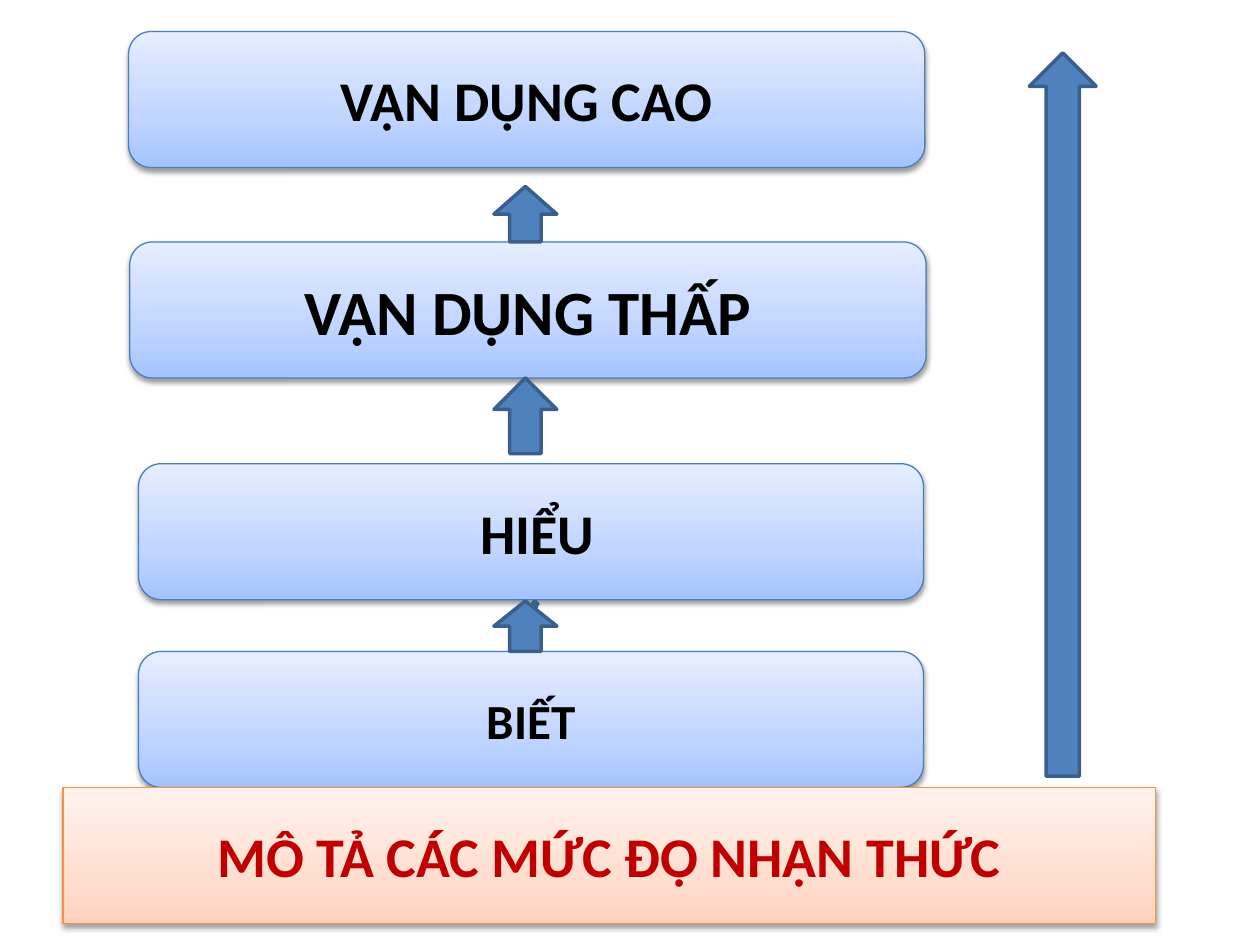
from lxml.etree import SubElement
from pptx import Presentation
from pptx.dml.color import RGBColor
from pptx.enum.shapes import MSO_SHAPE
from pptx.enum.text import MSO_ANCHOR, PP_ALIGN
from pptx.oxml import parse_xml
from pptx.oxml.ns import nsdecls, qn
from pptx.util import Inches, Pt

prs = Presentation()
prs.slide_width, prs.slide_height = Inches(10), Inches(7.5)
slide = prs.slides.add_slide(prs.slide_layouts[6])

# Grid of 100 columns by 75 rows
COL, ROW = prs.slide_width / 100, prs.slide_height / 75
BOX_H = 10.8
BLUE = ["A4C4FF", "BFD4FF", "E6EEFF"]
ORANGE = ["FFD2BD", "FFDED0", "FFF2ED"]
SHADOW = (
    f'<a:outerShdw {nsdecls("a")} blurRad="{Pt(3.1)}" dist="{Pt(1.6)}" dir="5400000" rotWithShape="0">'
    '<a:srgbClr val="000000"><a:alpha val="38000"/></a:srgbClr></a:outerShdw>'
)


def rgb(value):
    return RGBColor.from_string(value)


def add(kind, x, y, w, h, line, width):
    s = slide.shapes.add_shape(kind, round(x * COL), round(y * ROW), round(w * COL), round(h * ROW))
    s.shadow.inherit = False
    s.line.color.rgb = rgb(line)
    s.line.width = Pt(width)
    return s


# Four levels, top to bottom, and the title bar under them
round_box, bar = MSO_SHAPE.ROUNDED_RECTANGLE, MSO_SHAPE.ACTION_BUTTON_CUSTOM
boxes = [
    (round_box, 10.2, 2.5, 63.2, "VẬN DỤNG CAO", 32, "000000", BLUE, "4B7EBC"),
    (round_box, 10.3, 19.2, 63.2, "VẬN DỤNG THẤP", 36, "000000", BLUE, "4B7EBC"),
    (round_box, 11, 36.8, 62.3, " HIỂU", 32, "000000", BLUE, "4B7EBC"),
    (round_box, 11, 51.7, 62.3, "BIẾT", 28, "000000", BLUE, "4B7EBC"),
    (bar, 5, 62.5, 86.7, "MÔ TẢ CÁC MỨC ĐỘ NHẬN THỨC", 32, "C00000", ORANGE, "F69240"),
]
for kind, x, y, w, text, size, color, stops, line in boxes:
    s = add(kind, x, y, w, BOX_H, line, 0.75)

    # Three-stop gradient, lightest at the top
    s.fill.gradient()
    s.fill.gradient_angle = 90
    gs_lst = s._element.spPr.find(".//" + qn("a:gsLst"))
    for gs in list(gs_lst):
        gs_lst.remove(gs)
    for pos, stop in zip((0, 35, 100), stops):
        gs = SubElement(gs_lst, qn("a:gs"), pos=str(pos * 1000))
        SubElement(gs, qn("a:srgbClr"), val=stop)
    s._element.spPr.find(qn("a:effectLst")).append(parse_xml(SHADOW))

    # Label
    tf = s.text_frame
    tf.text = text
    tf.vertical_anchor = MSO_ANCHOR.MIDDLE
    p = tf.paragraphs[0]
    p.alignment = PP_ALIGN.CENTER
    font = p.runs[0].font
    font.name, font.size, font.bold = "Calibri", Pt(size), True
    font.color.rgb = rgb(color)

# Tall arrow on the right, then the arrows between levels
arrows = [
    (81.7, 4.2, 5.3, 57.4),
    (39.2, 47.7, 5, 4),
    (42.2, 47.7, 0.5, 0.5),
    (39.2, 30, 5, 6),
    (39.2, 14.8, 5, 4.4),
]
for x, y, w, h in arrows:
    s = add(MSO_SHAPE.UP_ARROW, x, y, w, h, "3A5F8C", 2)
    s.fill.solid()
    s.fill.fore_color.rgb = rgb("4F81BD")

prs.save("out.pptx")
